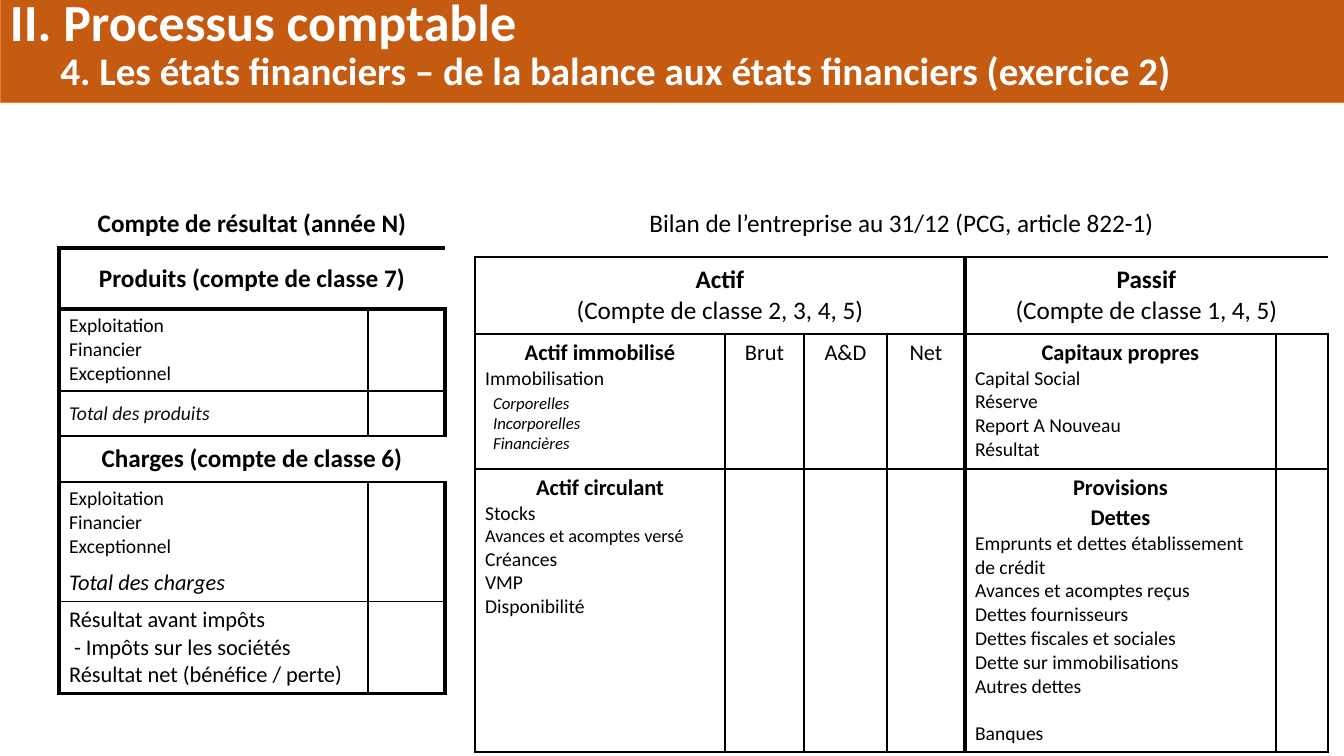
from lxml import etree
from pptx import Presentation
from pptx import util as u
from pptx.dml.color import RGBColor
from pptx.enum import shapes, text
from pptx.oxml.ns import qn

PX = 9071  # EMU per px
COLORS = {"black": "000000", "soft": "0D0D0D", "white": "FFFFFF",
          "banner": "C55A11", "edge": "ED7D31"}
PLAIN_GRID = "{2D5ABB26-0587-4C30-8999-92F81FD0307C}"
SIDES = ("L", "R", "T", "B")
CENTER = text.PP_ALIGN.CENTER

# Text styles: font values under "font", paragraph values under "paragraph"
STYLES = {
    "heading": {"font": {"size": 18, "bold": True}, "paragraph": {"alignment": CENTER}},
    "caption": {"font": {"size": 18}, "paragraph": {"alignment": CENTER}},
    "group": {"font": {"size": 16, "bold": True}, "paragraph": {"alignment": CENTER}},
    "next group": {"font": {"size": 16, "bold": True},
                   "paragraph": {"alignment": CENTER, "space_before": u.Pt(2)}},
    "column": {"font": {"size": 16}, "paragraph": {"alignment": CENTER}},
    "item": {"font": {"size": 14}},
    "tight item": {"font": {"size": 13}},
    "last item": {"font": {"size": 14}, "paragraph": {"space_before": u.Pt(17)}},
    "first detail": {"font": {"size": 12, "italic": True}, "indent": 8,
                     "paragraph": {"space_before": u.Pt(2)}},
    "detail": {"font": {"size": 12, "italic": True}, "indent": 8},
    "subtotal": {"font": {"size": 14, "italic": True}, "color": "soft"},
    "total": {"font": {"size": 16, "italic": True}},
    "result": {"font": {"size": 16}},
    "deduction": {"font": {"size": 16}, "indent": 5},
    "title": {"font": {"size": 37.2, "bold": True}, "color": "white",
              "paragraph": {"line_spacing": 0.7}},
    "subtitle": {"font": {"size": 27.9, "bold": True}, "color": "white",
                 "paragraph": {"line_spacing": 0.7}},
}


def px(value):
    return u.Emu(value * PX)


def rgb(name):
    return RGBColor.from_string(COLORS[name])


def lines(style, *words):
    return [(word, style) for word in words]


def add_run(paragraph, words, style):
    run = paragraph.add_run()
    run.text = words
    values = {"name": "Calibri", **style["font"]}
    values["size"] = u.Pt(values["size"])
    for key, value in values.items():
        setattr(run.font, key, value)
    run.font.color.rgb = rgb(style.get("color", "black"))


def write_lines(frame, content):
    for number, (words, name) in enumerate(content):
        paragraph = frame.paragraphs[0] if number == 0 else frame.add_paragraph()
        style = STYLES[name]
        values = {"alignment": text.PP_ALIGN.LEFT, **style.get("paragraph", {})}
        for key, value in values.items():
            setattr(paragraph, key, value)
        if "indent" in style:
            paragraph._p.get_or_add_pPr().set("marL", str(px(style["indent"])))
        if name == "subtitle":
            add_run(paragraph, "\t", STYLES["title"])
        add_run(paragraph, words, style)


def draw_rules(table, rules):
    """A rule is (direction, grid line, first cell, end cell, points)."""
    weights = {}
    for direction, line, first, end, points in rules:
        for place in range(first, end):
            if direction == "h":
                weights[line - 1, place, "B"] = weights[line, place, "T"] = points
            else:
                weights[place, line - 1, "R"] = weights[place, line, "L"] = points
    for row in range(len(table.rows)):
        for column in range(len(table.columns)):
            properties = table.cell(row, column)._tc.get_or_add_tcPr()
            edges = [side for side in SIDES if (row, column, side) in weights]
            for position, side in enumerate(edges):
                edge = etree.Element(qn(f"a:ln{side}"))
                edge.set("w", str(u.Pt(weights[row, column, side])))
                fill = etree.SubElement(edge, qn("a:solidFill"))
                etree.SubElement(fill, qn("a:srgbClr")).set("val", COLORS["black"])
                properties.insert(position, edge)


def add_statement(slide, left, top, widths, heights, cells, rules):
    """Cells map (row, column) to (columns spanned, anchored middle, lines)."""
    frame = slide.shapes.add_table(len(heights), len(widths), px(left), px(top),
                                   px(sum(widths)), px(sum(heights)))
    table = frame.table
    table.first_row = table.horz_banding = False
    table._tbl.tblPr.find(qn("a:tableStyleId")).text = PLAIN_GRID
    for column, width in zip(table.columns, widths):
        column.width = px(width)
    for row, height in zip(table.rows, heights):
        row.height = px(height)
    for cell in table.iter_cells():
        cell.fill.background()
        cell.margin_top = cell.margin_bottom = 0
    for (row, column), (span, middle, content) in cells.items():
        cell = table.cell(row, column)
        if span > 1:
            cell.merge(table.cell(row, column + span - 1))
        cell.margin_top = cell.margin_bottom = u.Inches(0.05)
        if middle:
            cell.vertical_anchor = text.MSO_ANCHOR.MIDDLE
        write_lines(cell.text_frame, content)
    draw_rules(table, rules)


def add_banner(slide):
    banner = slide.shapes.add_shape(shapes.MSO_SHAPE.RECTANGLE,
                                    px(0), px(-1), px(1344), px(103))
    banner.shadow.inherit = False
    banner.fill.solid()
    banner.fill.fore_color.rgb = rgb("banner")
    banner.line.color.rgb = rgb("edge")
    banner.line.width = u.Pt(0.5)
    banner.text_frame.word_wrap = True
    banner.text_frame.vertical_anchor = text.MSO_ANCHOR.MIDDLE
    write_lines(banner.text_frame, [
        ("II. Processus comptable", "title"),
        ("4. Les états financiers – de la balance aux états financiers (exercice 2)",
         "subtitle")])


def add_income_statement(slide):
    kinds = lines("item", "Exploitation", "Financier", "Exceptionnel")
    cells = {
        (0, 0): (2, False, lines("heading", "Compte de résultat (année N)")),
        (1, 0): (2, True, lines("heading", "Produits (compte de classe 7)")),
        (2, 0): (1, False, kinds),
        (3, 0): (1, True, lines("subtotal", "Total des produits")),
        (4, 0): (2, True, lines("heading", "Charges (compte de classe 6)")),
        (5, 0): (1, False, kinds),
        (6, 0): (1, True, lines("total", "Total des charges")),
        (7, 0): (1, False, [("Résultat avant impôts", "result"),
                            ("- Impôts sur les sociétés", "deduction"),
                            ("Résultat net (bénéfice / perte)", "result")]),
    }
    rules = [("h", 1, 0, 2, 3), ("h", 8, 0, 2, 2.25),
             ("v", 0, 1, 8, 3), ("v", 2, 1, 8, 3),
             ("v", 1, 2, 4, 1), ("v", 1, 5, 8, 1)]
    rules += [("h", line, 0, 2, 1) for line in (3, 4, 7)]
    add_statement(slide, 59, 203, [309, 77], [45, 61, 82, 45, 46, 82, 37, 92],
                  cells, rules)


def add_balance_sheet(slide):
    fixed_assets = (lines("group", "Actif immobilisé") + lines("item", "Immobilisation")
                    + lines("first detail", "Corporelles")
                    + lines("detail", "Incorporelles", "Financières"))
    current_assets = (lines("group", "Actif circulant") + lines("item", "Stocks")
                      + lines("tight item", "Avances et acomptes versé")
                      + lines("item", "Créances", "VMP", "Disponibilité"))
    equity = (lines("group", "Capitaux propres")
              + lines("item", "Capital Social", "Réserve", "Report A Nouveau", "Résultat"))
    debts = (lines("group", "Provisions") + lines("next group", "Dettes")
             + lines("item", "Emprunts et dettes établissement de crédit",
                     "Avances et acomptes reçus", "Dettes fournisseurs",
                     "Dettes fiscales et sociales", "Dette sur immobilisations",
                     "Autres dettes")
             + lines("last item", "Banques"))
    cells = {
        (0, 0): (6, False, lines("caption",
                                 "Bilan de l’entreprise au 31/12 (PCG, article 822-1)")),
        (1, 0): (4, True, [("Actif", "heading"),
                           ("(Compte de classe 2, 3, 4, 5)", "caption")]),
        (1, 4): (2, True, [("Passif", "heading"),
                           ("(Compte de classe 1, 4, 5)", "caption")]),
        (2, 0): (1, False, fixed_assets),
        (2, 4): (1, False, equity),
        (3, 0): (1, False, current_assets),
        (3, 4): (1, False, debts),
    }
    for column, label in enumerate(("Brut", "A&D", "Net"), start=1):
        cells[2, column] = (1, False, lines("column", label))
    rules = [("h", line, 0, 6, 2.25) for line in (1, 2, 4)]
    rules += [("v", 0, 1, 4, 2.25), ("v", 4, 1, 4, 3), ("v", 6, 1, 4, 2.25),
              ("v", 1, 2, 4, 1.5), ("v", 2, 2, 4, 1), ("v", 3, 2, 4, 1),
              ("v", 5, 2, 4, 2.25)]
    add_statement(slide, 475, 203, [250, 79, 83, 78, 311, 52], [54, 77, 135, 283],
                  cells, rules)


def main():
    presentation = Presentation()
    presentation.slide_width = px(1344)
    presentation.slide_height = px(756)
    slide = presentation.slides.add_slide(presentation.slide_layouts[6])
    add_income_statement(slide)
    add_balance_sheet(slide)
    add_banner(slide)
    presentation.save("out.pptx")


if __name__ == "__main__":
    main()
